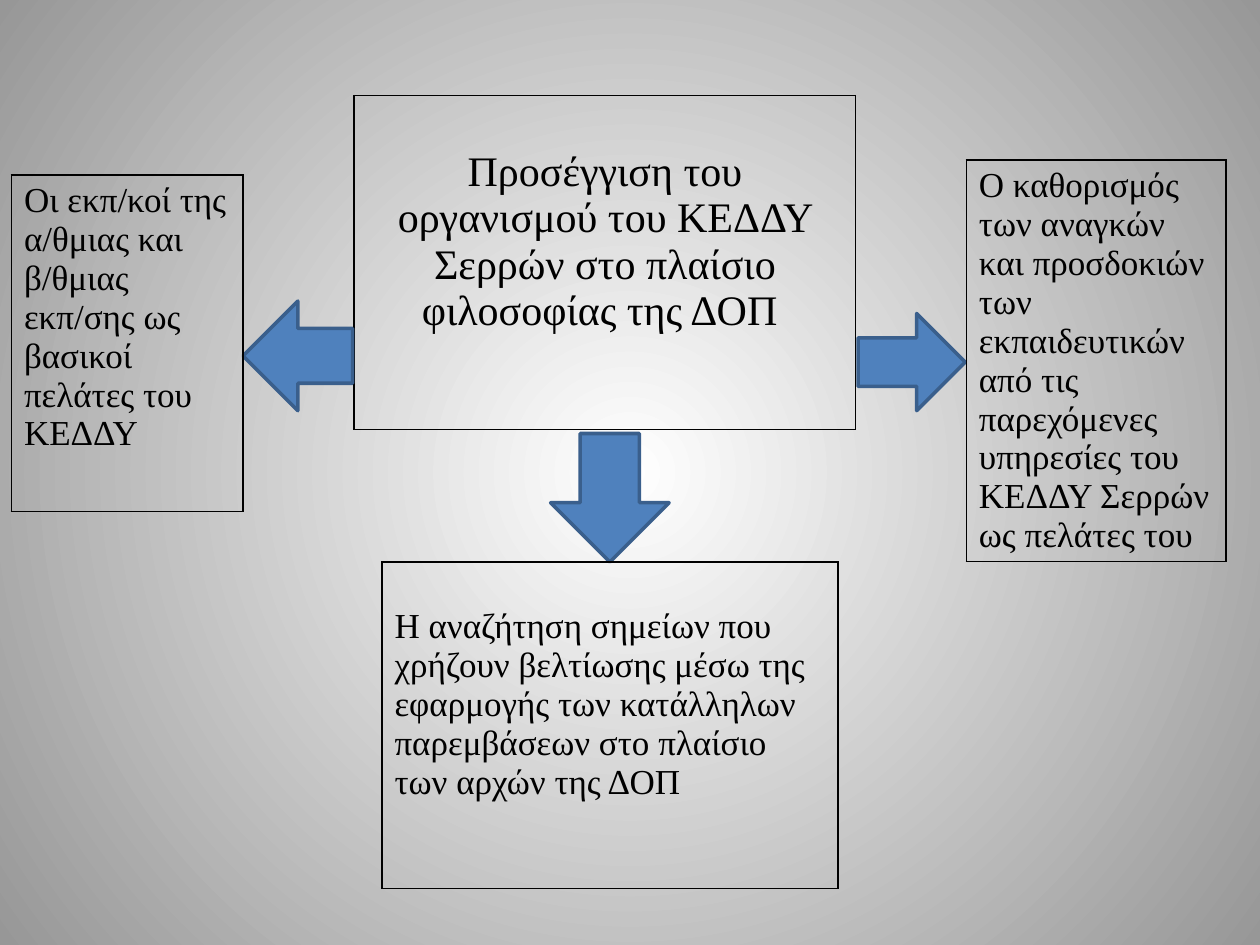
import pptx
import pptx.dml.color
import pptx.enum.shapes
import pptx.enum.text
import pptx.oxml
import pptx.oxml.ns
import pptx.util
from lxml import etree

Cm = pptx.util.Cm
Pt = pptx.util.Pt
qn = pptx.oxml.ns.qn
SHAPES = pptx.enum.shapes.MSO_SHAPE
ALIGN = pptx.enum.text.PP_ALIGN

COLOURS = {
    "centre": "FFFFFF",
    "edge": "979797",
    "ink": "000000",
    "arrow": "4F81BD",
    "arrow_line": "3A5F8C",
}


def colour(name):
    return pptx.dml.color.RGBColor.from_string(COLOURS[name])


def paint_background(page):
    fill = page.background.fill
    fill.gradient()
    for stop, name, position in zip(fill.gradient_stops, ("centre", "edge"), (0, 1)):
        stop.color.rgb = colour(name)
        stop.position = position
    linear = next(page.element.iter(qn("a:lin")))
    circle = etree.Element(qn("a:path"), {"path": "circle"})
    etree.SubElement(circle, qn("a:fillToRect"), {side: "50000" for side in "ltrb"})
    linear.getparent().replace(linear, circle)


def draw_borders(cell):
    properties = cell._tc.get_or_add_tcPr()
    for index, side in enumerate("LRTB"):
        line = etree.Element(qn(f"a:ln{side}"), {"w": str(Pt(1))})
        fill = etree.SubElement(line, qn("a:solidFill"))
        etree.SubElement(fill, qn("a:srgbClr"), {"val": COLOURS["ink"]})
        properties.insert(index, line)


def write_text(frame, text, size=20, align=ALIGN.LEFT):
    para = frame.paragraphs[0]
    para.alignment = align
    span = para.add_run()
    span.text = text
    span.font.name = "Times New Roman"
    span.font.size = Pt(size)
    span.font.color.rgb = colour("ink")


def add_panel(page, box, text, top_margin=0.13, **text_format):
    table = page.shapes.add_table(1, 1, *map(Cm, box)).table
    table.first_row = False
    table.horz_banding = False
    cell = table.cell(0, 0)
    cell.fill.background()
    draw_borders(cell)
    cell.margin_top = Cm(top_margin)
    write_text(cell.text_frame, text, **text_format)


def add_arrow(page, box, kind):
    arrow = page.shapes.add_shape(kind, *map(Cm, box))
    arrow.shadow.inherit = False
    arrow.fill.solid()
    arrow.fill.fore_color.rgb = colour("arrow")
    arrow.line.color.rgb = colour("arrow_line")
    arrow.line.width = Pt(2)


def main():
    deck = pptx.Presentation()
    deck.slide_width = Cm(25.4)
    deck.slide_height = Cm(19.05)
    page = deck.slides.add_slide(deck.slide_layouts[6])
    paint_background(page)

    add_panel(page, (7.14, 1.93, 10.11, 6.73),
              "Προσέγγιση του οργανισμού του ΚΕΔΔΥ Σερρών στο πλαίσιο φιλοσοφίας της ΔΟΠ ",
              top_margin=1.07, size=24, align=ALIGN.CENTER)

    add_arrow(page, (4.9, 6.07, 2.21, 2.21), SHAPES.LEFT_ARROW)
    add_arrow(page, (17.3, 6.32, 2.16, 1.96), SHAPES.RIGHT_ARROW)
    add_arrow(page, (11.1, 8.74, 2.39, 2.59), SHAPES.DOWN_ARROW)

    add_panel(page, (0.23, 3.53, 4.67, 6.78),
              "Οι εκπ/κοί της α/θμιας και β/θμιας εκπ/σης ως βασικοί πελάτες του ΚΕΔΔΥ")
    add_panel(page, (7.7, 11.33, 9.19, 6.58),
              "Η αναζήτηση σημείων που χρήζουν βελτίωσης μέσω της εφαρμογής των "
              "κατάλληλων παρεμβάσεων στο πλαίσιο των αρχών της ΔΟΠ",
              top_margin=0.92)
    add_panel(page, (19.48, 3.23, 5.23, 8.09),
              "Ο καθορισμός των αναγκών και προσδοκιών των εκπαιδευτικών από τις "
              "παρεχόμενες υπηρεσίες του ΚΕΔΔΥ Σερρών ως πελάτες του")

    deck.save("out.pptx")


if __name__ == "__main__":
    main()
